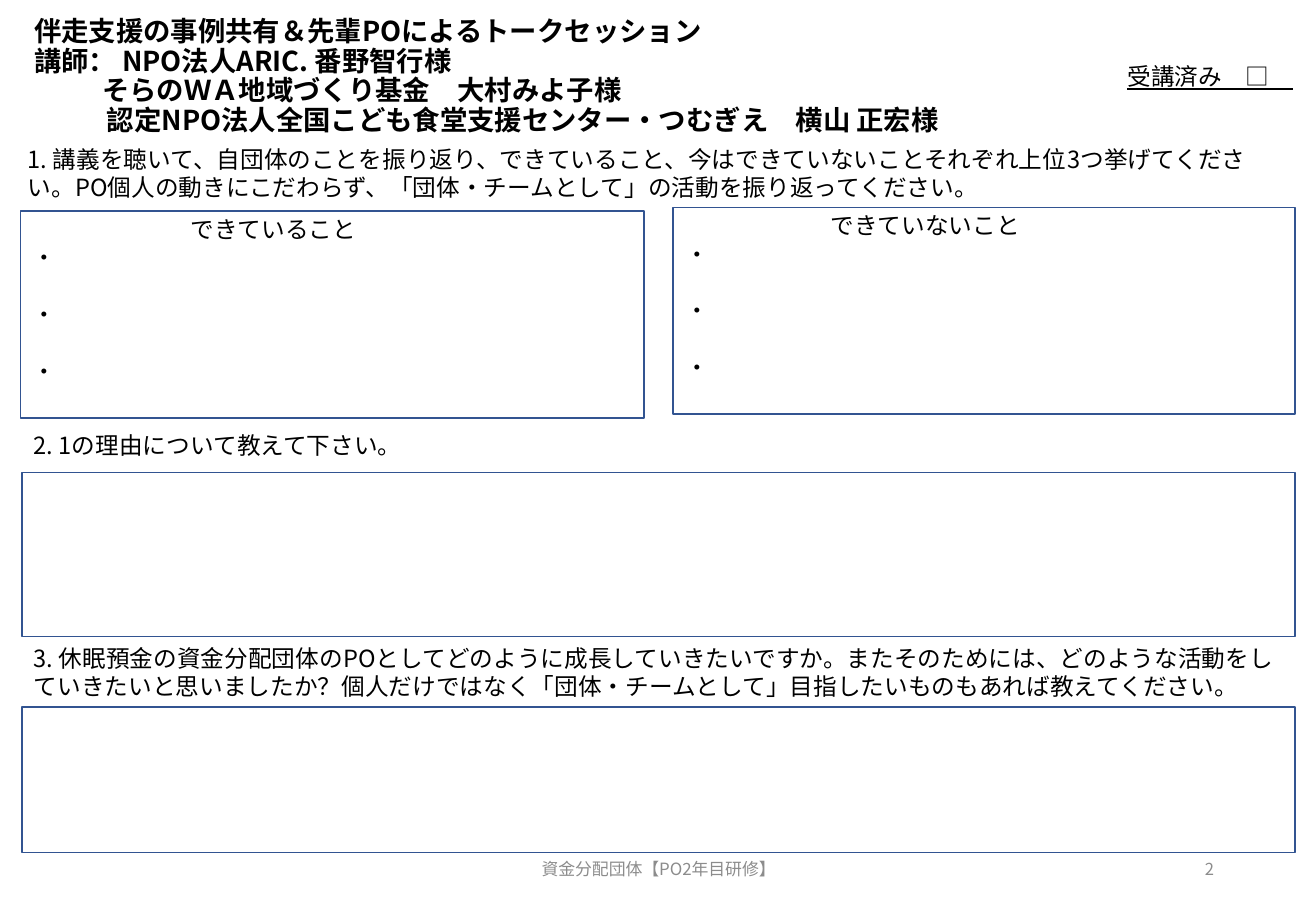
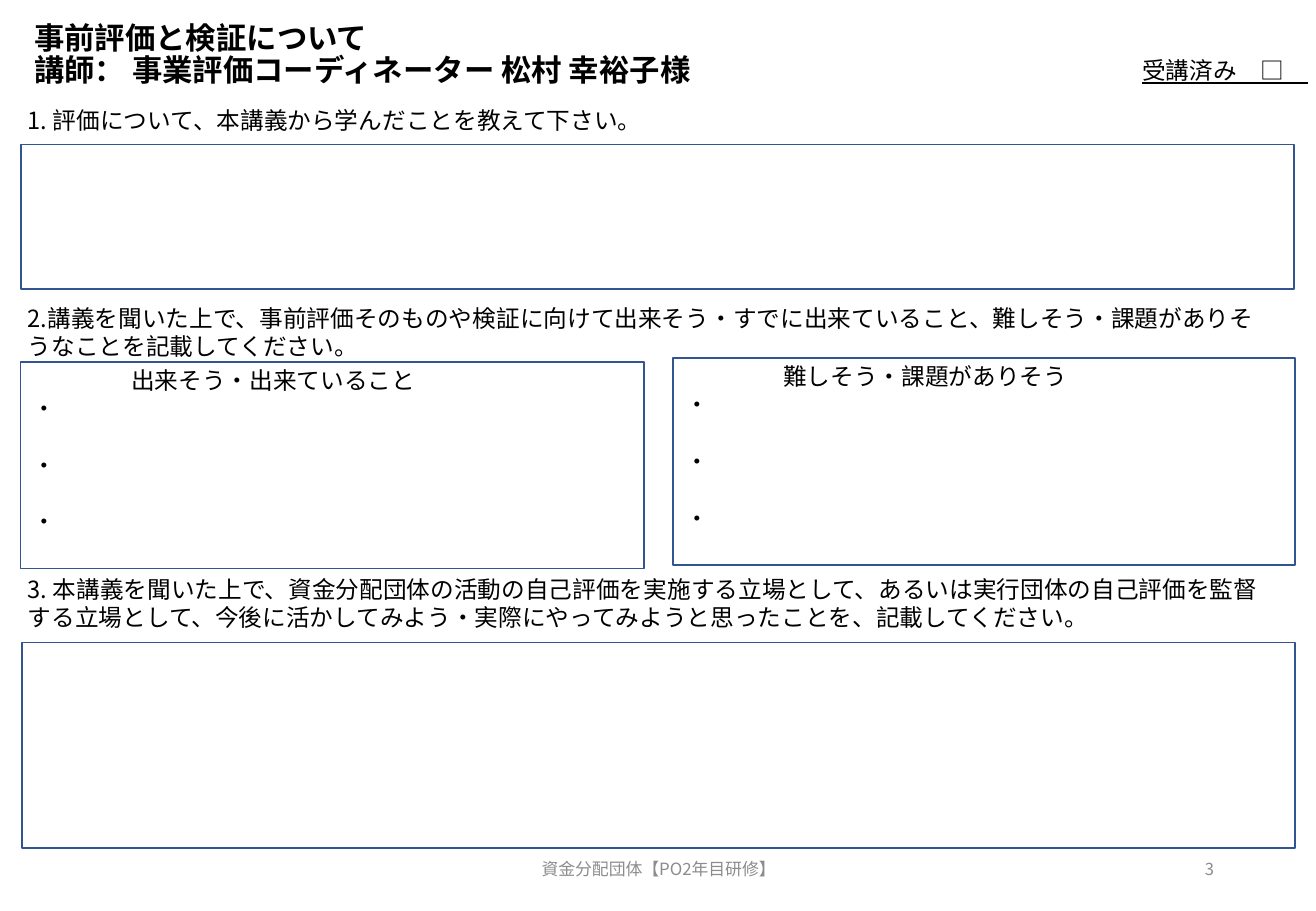
from lxml import etree
from pptx import Presentation
from pptx.dml.color import RGBColor
from pptx.enum.shapes import MSO_SHAPE
from pptx.enum.text import MSO_ANCHOR, MSO_AUTO_SIZE, PP_ALIGN
from pptx.oxml.ns import qn
from pptx.util import Emu, Inches, Pt

RECT = MSO_SHAPE.RECTANGLE
TOP, MID = MSO_ANCHOR.TOP, MSO_ANCHOR.MIDDLE
LEFT, MIDDLE, RIGHT = PP_ALIGN.LEFT, PP_ALIGN.CENTER, PP_ALIGN.RIGHT

# Shared style
FONT = "Noto Sans CJK JP"
BLACK, GREY, BLUE, WHITE = "000000", "8C8C8C", "325491", "FFFFFF"
BODY = 14
LEAD = 1.2          # line height as a share of the text size
PAD = 0.1           # side inset of text
FULL = 10.48        # width of questions and wide boxes
PAIR = [(0.17, 0, 5.13), (5.54, -0.03, 5.12)]   # left, rise, width
PAIR_H = 1.7
FOOT = "資金分配団体【PO2年目研修】"
MARK = "受講済み　□　"

# Content: titles are (indent, line); questions are (left, top, text);
# boxes are (left, top, height); pairs are (top, heads)
SHEETS = [
    dict(
        title=[
            (0, "伴走支援の事例共有＆先輩POによるトークセッション"),
            (0, "講師： NPO法人ARIC. 番野智行様"),
            (0.56, "そらのＷＡ地域づくり基金　大村みよ子様"),
            (0.6, "認定NPO法人全国こども食堂支援センター・つむぎえ　横山 正宏様"),
        ],
        size=16.2, place=(0.18, 0.2, 9.34, 0.86), mark=(9.18, 0.46),
        asks=[
            (0.13, 1.14, "1. 講義を聴いて、自団体のことを振り返り、できていること、今はできていないことそれぞれ上位3つ挙げてください。PO個人の動きにこだわらず、「団体・チームとして」の活動を振り返ってください。"),
            (0.18, 3.5, "2. 1の理由について教えて下さい。"),
            (0.18, 5.25, "3. 休眠預金の資金分配団体のPOとしてどのように成長していきたいですか。またそのためには、どのような活動をしていきたいと思いましたか？個人だけではなく「団体・チームとして」目指したいものもあれば教えてください。"),
        ],
        boxes=[(0.18, 3.89, 1.35), (0.18, 5.82, 1.2)],
        pair=(1.74, ["できていること", "できていないこと"]),
    ),
    dict(
        title=[
            (0, "事前評価と検証について"),
            (0, "講師： 事業評価コーディネーター 松村 幸裕子様"),
        ],
        size=18, place=(0.18, -0.04, 9.92, 0.99), mark=(9.3, 0.41),
        asks=[
            (0.13, 0.82, "1. 評価について、本講義から学んだことを教えて下さい。"),
            (0.13, 2.45, "2.講義を聞いた上で、事前評価そのものや検証に向けて出来そう・すでに出来ていること、難しそう・課題がありそうなことを記載してください。"),
            (0.13, 4.68, "3. 本講義を聞いた上で、資金分配団体の活動の自己評価を実施する立場として、あるいは実行団体の自己評価を監督する立場として、今後に活かしてみよう・実際にやってみようと思ったことを、記載してください。"),
        ],
        boxes=[(0.17, 1.19, 1.19), (0.18, 5.29, 1.69)],
        pair=(2.98, ["出来そう・出来ていること", "難しそう・課題がありそう"]),
    ),
]


def color(code):
    return RGBColor.from_string(code)


def inch(*sizes):
    return [Inches(s) for s in sizes]


def frame(shape, anchor, top=0.05):
    text = shape.text_frame
    text.word_wrap = True
    text.auto_size = MSO_AUTO_SIZE.NONE
    text.vertical_anchor = anchor
    text.margin_left = text.margin_right = Inches(PAD)
    text.margin_top = text.margin_bottom = Inches(top)
    return text


def write(text, lines, size=BODY, ink=BLACK, align=LEFT, bold=False,
          line=False, tight=1):
    """Fill a text frame with (indent, gap above in lines, words)."""
    for i, (indent, gap, words) in enumerate(lines):
        para = text.add_paragraph() if i else text.paragraphs[0]
        para.text = words
        para.alignment = align
        lead = size * LEAD * tight
        para.line_spacing = Pt(lead)
        para.space_before = Pt(lead * gap)
        font = para.font
        font.size, font.bold, font.underline = Pt(size), bold, line
        font.color.rgb = color(ink)
        font.name = FONT
        etree.SubElement(font._rPr, qn("a:ea")).set("typeface", FONT)
        props = para._p.get_or_add_pPr()
        props.set("marL", str(Inches(indent)))
        props.set("indent", "0")


def label(slide, place, words, anchor=TOP, **style):
    shape = slide.shapes.add_textbox(*inch(*place))
    write(frame(shape, anchor), [(0, 0, words)], **style)


def box(slide, *place):
    shape = slide.shapes.add_shape(RECT, *inch(*place))
    shape.shadow.inherit = False
    shape.fill.solid()
    shape.fill.fore_color.rgb = color(WHITE)
    shape.line.color.rgb = color(BLUE)
    shape.line.width = Pt(1)
    return shape


def listing(slide, place, head):
    """A box with a head left of centre and three open points."""
    room = place[2] - 2 * PAD
    em = BODY / 72
    indent = (room - (len(head) + 5) * em) / 2
    lines = [(indent, 0, head)] + [(0, min(i, 1), "・") for i in range(3)]
    write(frame(box(slide, *place), TOP, 0.03), lines)


def build(prs, sheet, number):
    slide = prs.slides.add_slide(prs.slide_layouts[5])
    # Title and attendance mark
    title = slide.shapes.title
    title.left, title.top, title.width, title.height = inch(*sheet["place"])
    write(frame(title, MID), [(x, 0, words) for x, words in sheet["title"]],
          size=sheet["size"], bold=True, tight=0.9)
    label(slide, (*sheet["mark"], 2.01, 0.34), MARK, line=True)
    # Questions and answer boxes
    for left, top, words in sheet["asks"]:
        wide = 10.39 if words.startswith("1") else FULL
        label(slide, (left, top, wide, 0.57), words)
    for left, top, high in sheet["boxes"]:
        box(slide, left, top, FULL, high)
    top, heads = sheet["pair"]
    for (left, rise, wide), head in zip(PAIR, heads):
        listing(slide, (left, top + rise, wide, PAIR_H), head)
    # Footer
    label(slide, (3.59, 6.95, 3.66, 0.4), FOOT, MID, size=10, ink=GREY,
          align=MIDDLE)
    label(slide, (7.65, 6.95, 2.44, 0.4), str(number), MID, size=9.8,
          ink=GREY, align=RIGHT)


def main():
    prs = Presentation()
    prs.slide_width, prs.slide_height = Emu(Inches(10.83)), Emu(Inches(7.5))
    for number, sheet in enumerate(SHEETS, 2):
        build(prs, sheet, number)
    prs.save("out.pptx")


if __name__ == "__main__":
    main()
